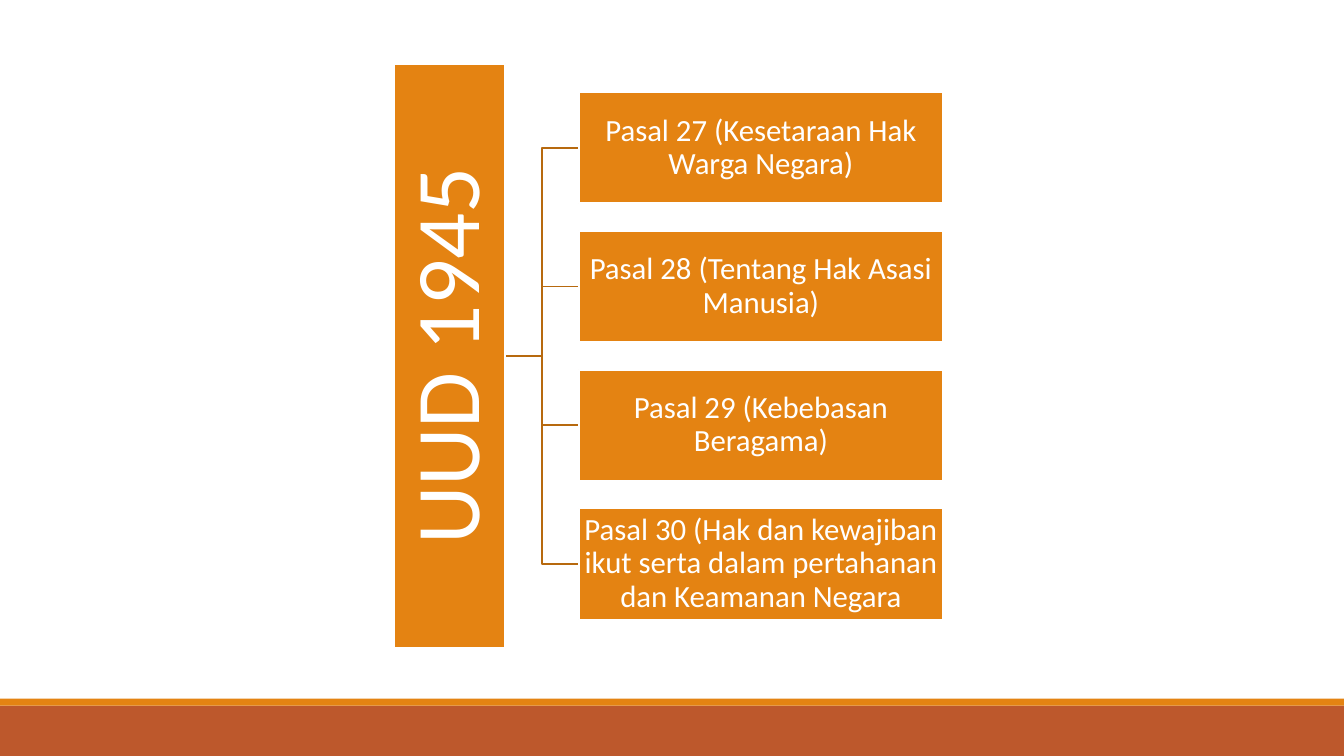
"""Build a slide linking UUD 1945 to four of its articles."""
from lxml import etree
from pptx import Presentation
from pptx.dml.color import RGBColor
from pptx.enum.shapes import MSO_CONNECTOR, MSO_SHAPE
from pptx.enum.text import MSO_ANCHOR, PP_ALIGN
from pptx.oxml.ns import qn
from pptx.util import Pt

RECTANGLE = MSO_SHAPE.RECTANGLE
ELBOW = MSO_CONNECTOR.ELBOW
MIDDLE = MSO_ANCHOR.MIDDLE
CENTER = PP_ALIGN.CENTER

LAW = "UUD 1945"
ARTICLES = [
    "Pasal 27 (Kesetaraan Hak Warga Negara)",
    "Pasal 28 (Tentang Hak Asasi Manusia)",
    "Pasal 29 (Kebebasan Beragama)",
    "Pasal 30 (Hak dan kewajiban ikut serta dalam pertahanan dan Keamanan Negara",
]
ORANGE, RUST, BROWN, WHITE = "E48312", "BD582C", "B7690E", "FFFFFF"
FONT = "Calibri"

SLIDE_WIDTH, SLIDE_HEIGHT = 960, 540
FOOTER_TOP, STRIPE_HEIGHT = 504, 5
BOX_HEIGHT, BOX_GAP = 79.3, 19.8
LAW_LENGTH, LAW_CENTER_X, CENTER_Y = 417.4, 321.2, 254.2
ARTICLE_LEFT, ARTICLE_WIDTH = 413.4, 260.2


def color(hex_value):
    return RGBColor.from_string(hex_value)


def add_bar(slide, left, top, width, height, fill):
    bar = slide.shapes.add_shape(RECTANGLE, Pt(left), Pt(top), Pt(width), Pt(height))
    bar.shadow.inherit = False
    bar.fill.solid()
    bar.fill.fore_color.rgb = color(fill)
    bar.line.fill.background()
    return bar


def add_box(slide, left, top, width, text, size, inset):
    box = add_bar(slide, left, top, width, BOX_HEIGHT, ORANGE)
    box.line.color.rgb = color(WHITE)
    box.line.width = Pt(1.25)
    frame = box.text_frame
    frame.word_wrap = True
    frame.vertical_anchor = MIDDLE
    frame.margin_left = frame.margin_right = Pt(inset)
    frame.margin_top = frame.margin_bottom = Pt(inset)
    paragraph = frame.paragraphs[0]
    paragraph.alignment = CENTER
    paragraph.line_spacing = 0.9
    run = paragraph.add_run()
    run.text = text
    run.font.name = FONT
    run.font.size = Pt(size)
    run.font.color.rgb = color(WHITE)
    return box


def add_branch(slide, article_y):
    law_right = LAW_CENTER_X + BOX_HEIGHT / 2
    branch = slide.shapes.add_connector(
        ELBOW, Pt(law_right), Pt(CENTER_Y), Pt(ARTICLE_LEFT), Pt(article_y)
    )
    branch.line.color.rgb = color(BROWN)
    branch.line.width = Pt(1.25)
    etree.SubElement(branch._element.spPr, qn("a:effectLst"))


def main():
    deck = Presentation()
    deck.slide_width, deck.slide_height = Pt(SLIDE_WIDTH), Pt(SLIDE_HEIGHT)
    slide = deck.slides.add_slide(deck.slide_layouts[6])

    add_bar(slide, 0, FOOTER_TOP, SLIDE_WIDTH, SLIDE_HEIGHT - FOOTER_TOP, RUST)
    add_bar(slide, 0, FOOTER_TOP - STRIPE_HEIGHT, SLIDE_WIDTH, STRIPE_HEIGHT, ORANGE)

    pitch = BOX_HEIGHT + BOX_GAP
    first_y = CENTER_Y - pitch * (len(ARTICLES) - 1) / 2
    article_centers = [first_y + i * pitch for i in range(len(ARTICLES))]
    for article_y in article_centers:
        add_branch(slide, article_y)

    law = add_box(slide, LAW_CENTER_X - LAW_LENGTH / 2, CENTER_Y - BOX_HEIGHT / 2,
                  LAW_LENGTH, LAW, 65, 3.6)
    law.rotation = 270
    for article, article_y in zip(ARTICLES, article_centers):
        add_box(slide, ARTICLE_LEFT, article_y - BOX_HEIGHT / 2,
                ARTICLE_WIDTH, article, 22, 1.4)

    deck.save("out.pptx")


if __name__ == "__main__":
    main()
